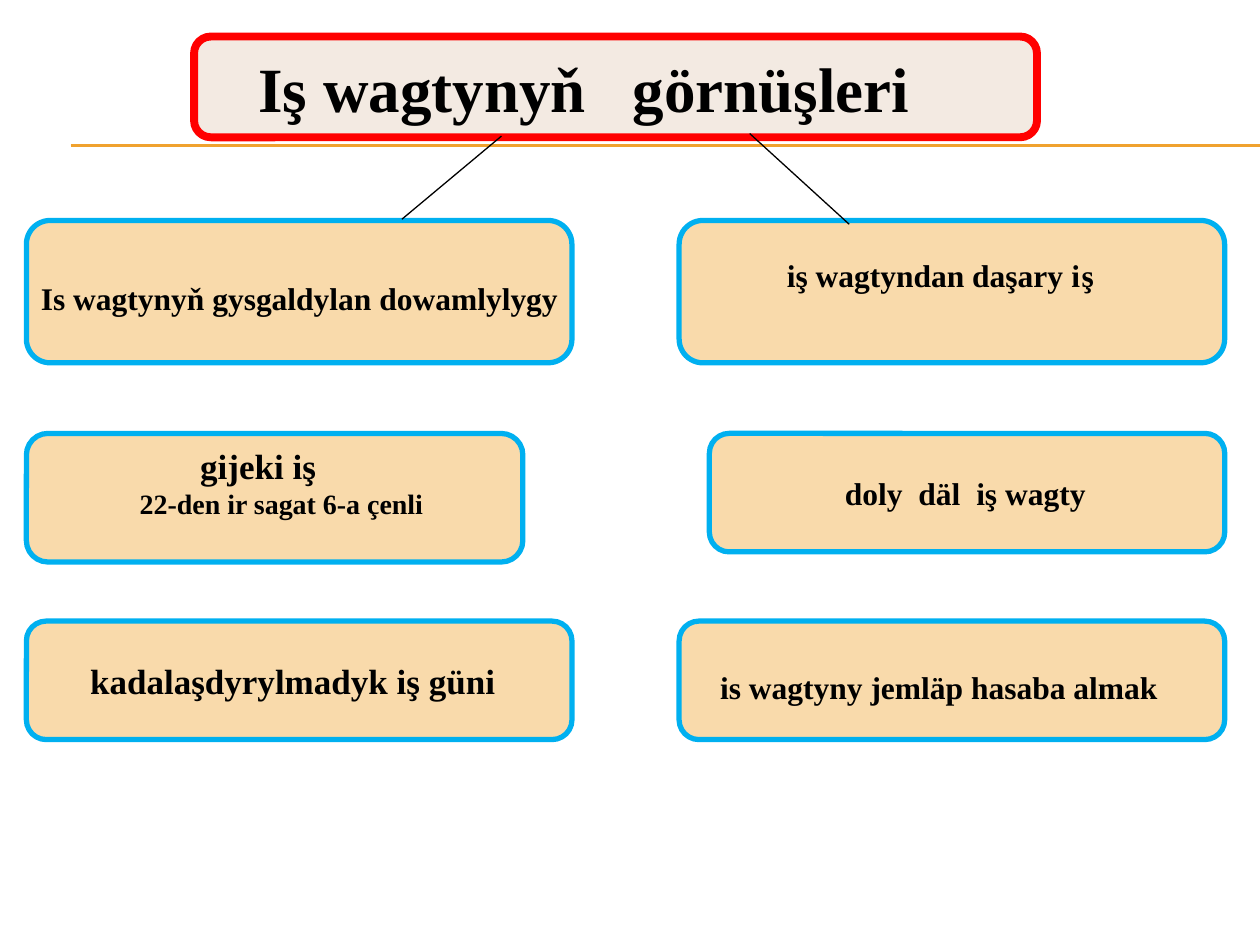
"""Build a slide on the kinds of working time as a titled two-column chart."""
from lxml import etree
from pptx import Presentation
from pptx.dml.color import RGBColor
from pptx.enum.shapes import MSO_CONNECTOR, MSO_SHAPE
from pptx.enum.text import MSO_ANCHOR, MSO_AUTO_SIZE, PP_ALIGN
from pptx.oxml.ns import qn
from pptx.util import Inches, Pt

MIDDLE = MSO_ANCHOR.MIDDLE
LEFT = PP_ALIGN.LEFT
FIXED = MSO_AUTO_SIZE.NONE
ROUNDED = MSO_SHAPE.ROUNDED_RECTANGLE
STRAIGHT = MSO_CONNECTOR.STRAIGHT

LEFT_EDGE, RIGHT_EDGE = 0.21, 9.72
ROWS = (1.75, 3.44, 4.93)
TITLE_AREA = [Inches(v) for v in (1.54, 0.29, 6.69, 0.8)]


def paint(color_format, value):
    color_format.rgb = RGBColor.from_string(value)


def write(holder, lines, inset=0, shift=0):
    """Write lines of (text, size, spacing) runs, moved by inset and shift."""
    frame = holder.text_frame
    frame.word_wrap, frame.auto_size = True, FIXED
    frame.vertical_anchor = MIDDLE
    frame.margin_left, frame.margin_right = Inches(inset), 0
    frame.margin_top = Inches(max(2 * shift, 0))
    frame.margin_bottom = Inches(max(-2 * shift, 0))
    for number, (indent, runs) in enumerate(lines):
        paragraph = frame.add_paragraph() if number else frame.paragraphs[0]
        paragraph.alignment = LEFT
        if indent:
            paragraph._p.get_or_add_pPr().set("marL", str(Inches(indent)))
        for text, size, spacing in runs:
            run = paragraph.add_run()
            run.text = text
            run.font.name, run.font.size, run.font.bold = "Times New Roman", Pt(size), True
            paint(run.font.color, "000000")
            if spacing:
                run.font._element.set("spc", str(int(spacing * 100)))


presentation = Presentation()
presentation.slide_width, presentation.slide_height = Inches(10), Inches(7.5)
slide = presentation.slides.add_slide(presentation.slide_layouts[5])
shapes = slide.shapes

title_frame = shapes.add_shape(ROUNDED, *TITLE_AREA)
kinds = [
    (0, 0, 4.33, 1.13, 0.06, 0.05, [(0, [("Is wagtynyň gysgaldylan dowamlylygy", 18, 0)])]),
    (1, 0, 4.33, 1.13, 0.8, -0.13, [(0, [("iş wagtyndan daşary ", 18, 0), ("iş", 18, 1)])]),
    (0, 1, 3.94, 1.02, 0.85, -0.12, [(0.48, [("gijeki iş", 20, 0)]),
                                     (0, [("22-den ir sagat 6-a çenli", 16, 0)])]),
    (1, 1, 4.09, 0.94, 1.03, 0, [(0, [("doly", 18, 0), (" ", 18, 4.5), ("däl", 18, 0),
                                      (" ", 18, 4.5), ("iş wagty", 18, 0)])]),
    (0, 2, 4.33, 0.94, 0.46, 0, [(0, [("kadalaşdyrylmadyk iş güni", 20, 0)])]),
    (1, 2, 4.33, 0.94, 0.28, 0.05, [(0, [("is wagtyny jemläp hasaba almak", 18, 0)])]),
]
boxes = [(title_frame, "F3EAE2", "FF0000", 4.5)]
for column, row, width, height, inset, shift, lines in kinds:
    left = RIGHT_EDGE - width if column else LEFT_EDGE
    kind = shapes.add_shape(ROUNDED, *[Inches(v) for v in (left, ROWS[row], width, height)])
    write(kind, lines, inset, shift)
    boxes.append((kind, "F9DAAB", "00B0F0", 3))

for box, fill, outline, weight in boxes:
    box.shadow.inherit = False
    box.adjustments[0] = 0.167
    box.fill.solid()
    paint(box.fill.fore_color, fill)
    paint(box.line.color, outline)
    box.line.width = Pt(weight)

title = shapes.title
title.left, title.top, title.width, title.height = TITLE_AREA
write(title, [(0, [("Iş wagtynyň", 36, 0), (" ", 36, 18), ("görnüşleri", 36, 0)])], 0.51)
shapes._spTree.append(title._element)

rules = [
    (0.56, 1.15, 10, 1.15, "F0A22E"),
    (0.56, 1.16, 10, 1.16, "F0A22E"),
    (5.95, 1.06, 6.74, 1.78, "000000"),
    (3.98, 1.08, 3.19, 1.74, "000000"),
]
for *ends, color in rules:
    rule = shapes.add_connector(STRAIGHT, *[Inches(v) for v in ends])
    paint(rule.line.color, color)
    rule.line.width = Pt(0.75)
    etree.SubElement(rule._element.spPr, qn("a:effectLst"))

presentation.save("out.pptx")
